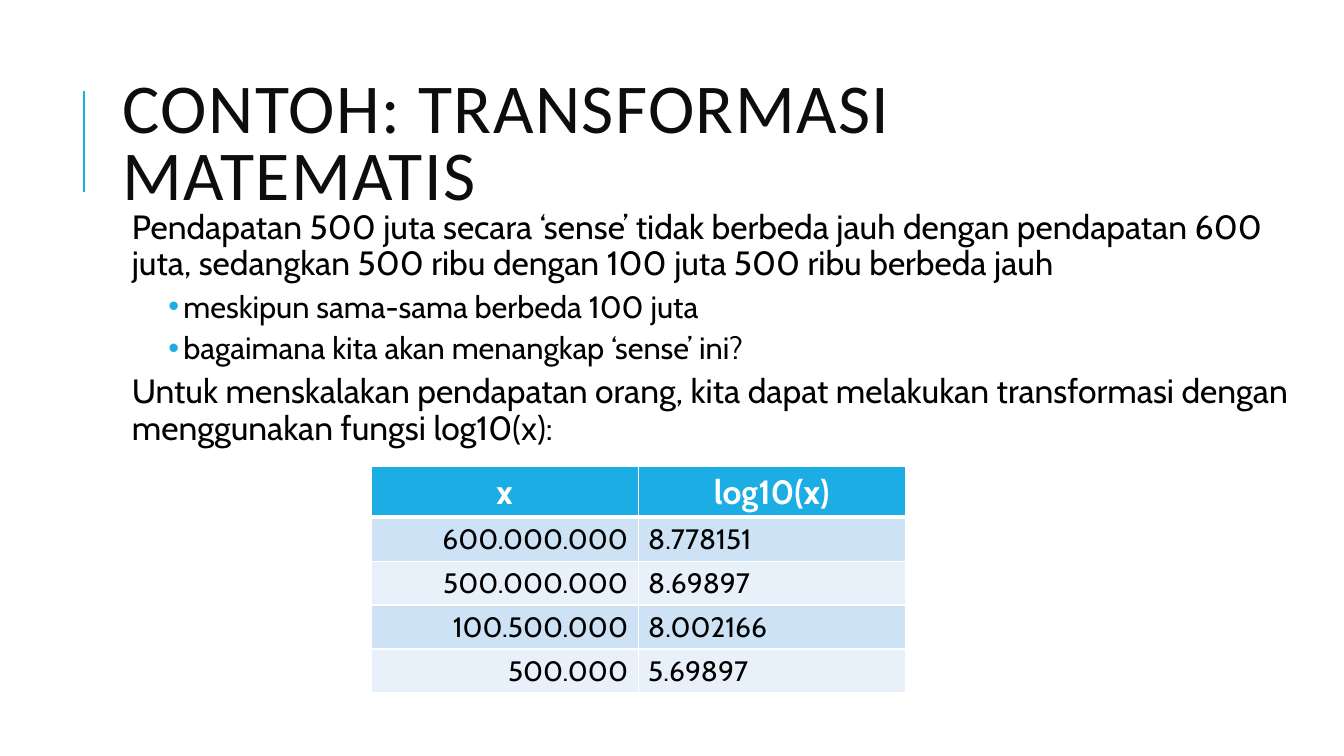
from dataclasses import dataclass

from lxml.etree import SubElement
from pptx import Presentation
from pptx.dml.color import RGBColor as RGB
from pptx.enum.shapes import MSO_CONNECTOR as Connector
from pptx.enum.text import MSO_ANCHOR as Anchor, PP_ALIGN as Align
from pptx.oxml.ns import qn
from pptx.util import Pt


@dataclass(frozen=True)
class Theme:
    accent: str = "1CADE4"
    title_ink: str = "0D0D0D"
    ink: str = "000000"
    white: str = "FFFFFF"
    bands: tuple = ("CDE3F5", "E8F1FA")
    title_font: str = "Calibri"
    body_font: str = "Cabin"
    title_size: float = 50
    body_size: float = 24
    bullet_size: float = 22
    cell_size: float = 20


class SlideBuilder:
    def __init__(self, slide, theme):
        self.slide = slide
        self.theme = theme

    def style(self, paragraph, size, color, face=None, bold=False):
        font = paragraph.font
        font.name = face or self.theme.body_font
        font.size = Pt(size)
        font.bold = bold
        font.color.rgb = RGB.from_string(color)

    def rule(self, x, top, bottom):
        rule = self.slide.shapes.add_connector(
            Connector.STRAIGHT, Pt(x), Pt(bottom), Pt(x), Pt(top))
        rule.line.color.rgb = RGB.from_string(self.theme.accent)
        rule.line.width = Pt(1.5)
        SubElement(rule.element.spPr, qn("a:effectLst"))

    def frame(self, left, top, width, height):
        box = self.slide.shapes.add_textbox(Pt(left), Pt(top), Pt(width), Pt(height))
        box.text_frame.word_wrap = True
        return box.text_frame

    def title(self, text, *place):
        frame = self.frame(*place)
        frame.vertical_anchor = Anchor.MIDDLE
        heading = frame.paragraphs[0]
        heading.text = text
        heading.line_spacing = 0.8
        self.style(heading, self.theme.title_size, self.theme.title_ink,
                   self.theme.title_font)
        # Letter spacing of 1 pt
        heading.runs[0].font._element.set("spc", "100")

    def body(self, entries, *place):
        frame = self.frame(*place)
        frame.margin_left = frame.margin_right = Pt(3.6)
        for index, (text, bulleted) in enumerate(entries):
            entry = frame.add_paragraph() if index else frame.paragraphs[0]
            entry.text = text
            entry.line_spacing = 0.9
            entry.space_before, entry.space_after = Pt(2), Pt(4)
            size = self.theme.bullet_size if bulleted else self.theme.body_size
            props = entry._p.get_or_add_pPr()
            props.set("marL", str(Pt(46.8 if bulleted else 10)))
            props.set("indent", str(Pt(-10.8 if bulleted else 0)))
            if bulleted:
                color = SubElement(props, qn("a:buClr"))
                SubElement(color, qn("a:srgbClr"), val=self.theme.accent)
                SubElement(props, qn("a:buFont"), typeface="Arial")
                SubElement(props, qn("a:buChar"), char="•")
            self.style(entry, size, self.theme.ink)

    def borders(self, cell, **widths):
        props = cell._tc.get_or_add_tcPr()
        for side in "LRTB":
            line = SubElement(props, qn(f"a:ln{side}"), w=str(Pt(widths.get(side, 1))))
            fill = SubElement(line, qn("a:solidFill"))
            SubElement(fill, qn("a:srgbClr"), val=self.theme.white)

    def table(self, rows, left, top, width, header_height, row_height):
        height = header_height + row_height * (len(rows) - 1)
        table = self.slide.shapes.add_table(
            len(rows), len(rows[0]), Pt(left), Pt(top), Pt(width), Pt(height)).table
        theme = self.theme
        for r, values in enumerate(rows):
            table.rows[r].height = Pt(row_height if r else header_height)
            for c, value in enumerate(values):
                cell = table.cell(r, c)
                # Thick line between header and values
                self.borders(cell, T=3 if r == 1 else 1, B=1 if r else 3)
                cell.fill.solid()
                cell.fill.fore_color.rgb = RGB.from_string(
                    theme.bands[(r - 1) % 2] if r else theme.accent)
                cell.text = value
                entry = cell.text_frame.paragraphs[0]
                if r:
                    entry.alignment = (Align.RIGHT, Align.LEFT)[c]
                    self.style(entry, theme.cell_size, theme.ink)
                else:
                    entry.alignment = Align.CENTER
                    self.style(entry, theme.body_size, theme.white, bold=True)


def main():
    deck = Presentation()
    deck.slide_width, deck.slide_height = Pt(960), Pt(540)
    builder = SlideBuilder(deck.slides.add_slide(deck.slide_layouts[6]), Theme())

    # Heading with accent rule
    builder.rule(60, 64.8, 136.8)
    builder.title("CONTOH: TRANSFORMASI MATEMATIS", 80.6, 46, 765.4, 118)

    # Explanation: text and whether it is bulleted
    builder.body([
        ("Pendapatan 500 juta secara ‘sense’ tidak berbeda jauh dengan pendapatan 600 "
         "juta, sedangkan 500 ribu dengan 100 juta 500 ribu berbeda jauh", False),
        ("meskipun sama-sama berbeda 100 juta", True),
        ("bagaimana kita akan menangkap ‘sense’ ini?", True),
        ("Untuk menskalakan pendapatan orang, kita dapat melakukan transformasi dengan "
         "menggunakan fungsi log10(x):", False),
    ], 80.6, 146.9, 843.8, 316.8)

    # Incomes and their logarithms
    builder.table([
        ("x", "log10(x)"),
        ("600.000.000", "8.778151"),
        ("500.000.000", "8.69897"),
        ("100.500.000", "8.002166"),
        ("500.000", "5.69897"),
    ], 265, 333.4, 381.6, 35, 31.4)

    deck.save("out.pptx")


if __name__ == "__main__":
    main()
